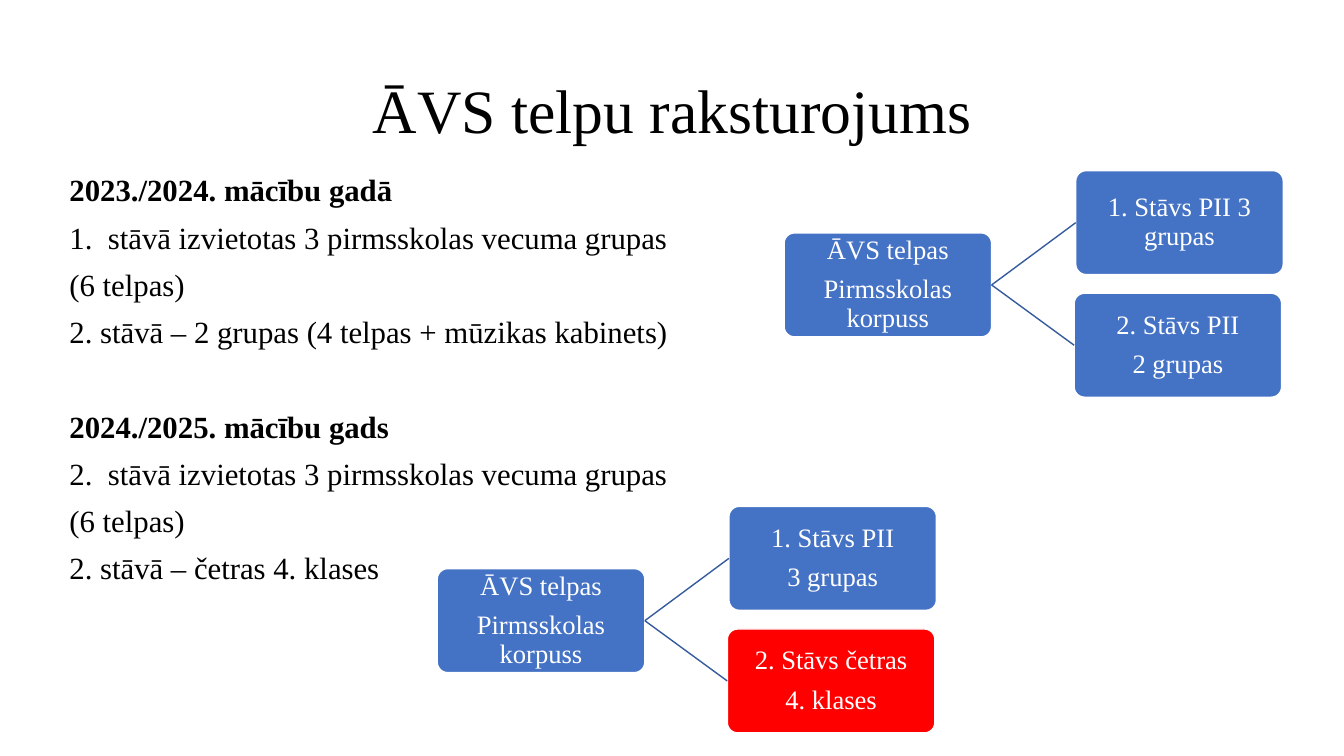
"""Build the slide on the ĀVS rooms, with two floor trees."""
import pptx
import pptx.util
import pptx.dml.color
import pptx.enum.shapes
import pptx.enum.text
import lxml.etree

Cm, Pt = pptx.util.Cm, pptx.util.Pt
Shape = pptx.enum.shapes.MSO_SHAPE
Link = pptx.enum.shapes.MSO_CONNECTOR
Align = pptx.enum.text.PP_ALIGN
Anchor = pptx.enum.text.MSO_ANCHOR
hues = {"blue": "4472C4", "red": "FF0000", "line": "365B9D",
        "white": "FFFFFF", "black": "000000"}
ns = "{http://schemas.openxmlformats.org/drawingml/2006/main}"


def tint(name):
    return pptx.dml.color.RGBColor.from_string(hues[name])


def write(frame, text, size=22, hue="black", align=Align.LEFT, anchor=Anchor.TOP,
          bold=False, before=0, after=0, first=True, num=None):
    frame.word_wrap = True
    frame.vertical_anchor = anchor
    para = frame.paragraphs[0] if first else frame.add_paragraph()
    para.alignment = align
    para.line_spacing = 0.9
    para.space_before, para.space_after = Pt(before), Pt(after)
    run = para.add_run()
    run.text = text
    run.font.name, run.font.size, run.font.bold = "Times New Roman", Pt(size), bold
    run.font.color.rgb = tint(hue)
    if num:
        props = para._p.get_or_add_pPr()
        props.set("marL", str(Cm(0.97)))
        props.set("indent", str(-Cm(0.97)))
        lxml.etree.SubElement(props, ns + "buAutoNum", type="arabicPeriod", startAt=str(num))


deck = pptx.Presentation()
deck.slide_width, deck.slide_height = Cm(33.87), Cm(19.05)
slide = deck.slides.add_slide(deck.slide_layouts[6])
shapes = slide.shapes

title = shapes.add_textbox(Cm(2.34), Cm(1.02), Cm(29.21), Cm(3.68))
write(title.text_frame, "ĀVS telpu raksturojums", size=44,
      align=Align.CENTER, anchor=Anchor.MIDDLE)

body = shapes.add_textbox(Cm(1.5), Cm(4.29), Cm(16.61), Cm(12.09))
years = [
    ("2023./2024. mācību gadā", "2. stāvā – 2 grupas (4 telpas + mūzikas kabinets)"),
    ("2024./2025. mācību gads", "2. stāvā – četras 4. klases"),
]
for num, (year, floor) in enumerate(years, 1):
    write(body.text_frame, year, bold=True, before=10 if num == 1 else 43.7, first=num == 1)
    write(body.text_frame, "stāvā izvietotas 3 pirmsskolas vecuma grupas",
          before=10, first=False, num=num)
    for text in ("(6 telpas)", floor):
        write(body.text_frame, text, before=10, first=False)

root = ["ĀVS telpas", "Pirmsskolas korpuss"]
trees = [
    (11.02, 14.33, ["1. Stāvs PII", "3 grupas"], ["2. Stāvs četras", "4. klases"], "red"),
    (19.76, 5.87, ["1. Stāvs PII 3 grupas"], ["2. Stāvs PII", "2 grupas"], "blue"),
]
for left, top, upper, lower, last in trees:
    nodes = []
    for dx, dy, lines, fill in [(0, 0, root, "blue"), (7.35, -1.57, upper, "blue"),
                                (7.31, 1.52, lower, last)]:
        node = shapes.add_shape(Shape.ROUNDED_RECTANGLE, Cm(left + dx), Cm(top + dy),
                                Cm(5.23), Cm(2.62))
        node.adjustments[0] = 0.1
        node.shadow.inherit = False
        node.fill.solid()
        node.fill.fore_color.rgb = tint(fill)
        node.line.color.rgb = tint("white")
        node.line.width = Pt(1)
        frame = node.text_frame
        frame.margin_left = frame.margin_right = Cm(0.03)
        frame.margin_top = frame.margin_bottom = Cm(0.03)
        for row, text in enumerate(lines):
            write(frame, text, size=19, hue="white", align=Align.CENTER,
                  anchor=Anchor.MIDDLE, after=7.5, first=row == 0)
        nodes.append(node)
    for child in nodes[1:]:
        link = shapes.add_connector(Link.STRAIGHT, 0, 0, 0, 0)
        link.begin_connect(nodes[0], 3)
        link.end_connect(child, 1)
        link.line.color.rgb = tint("line")
        link.line.width = Pt(1)
        lxml.etree.SubElement(link._element.spPr, ns + "effectLst")

deck.save("out.pptx")
